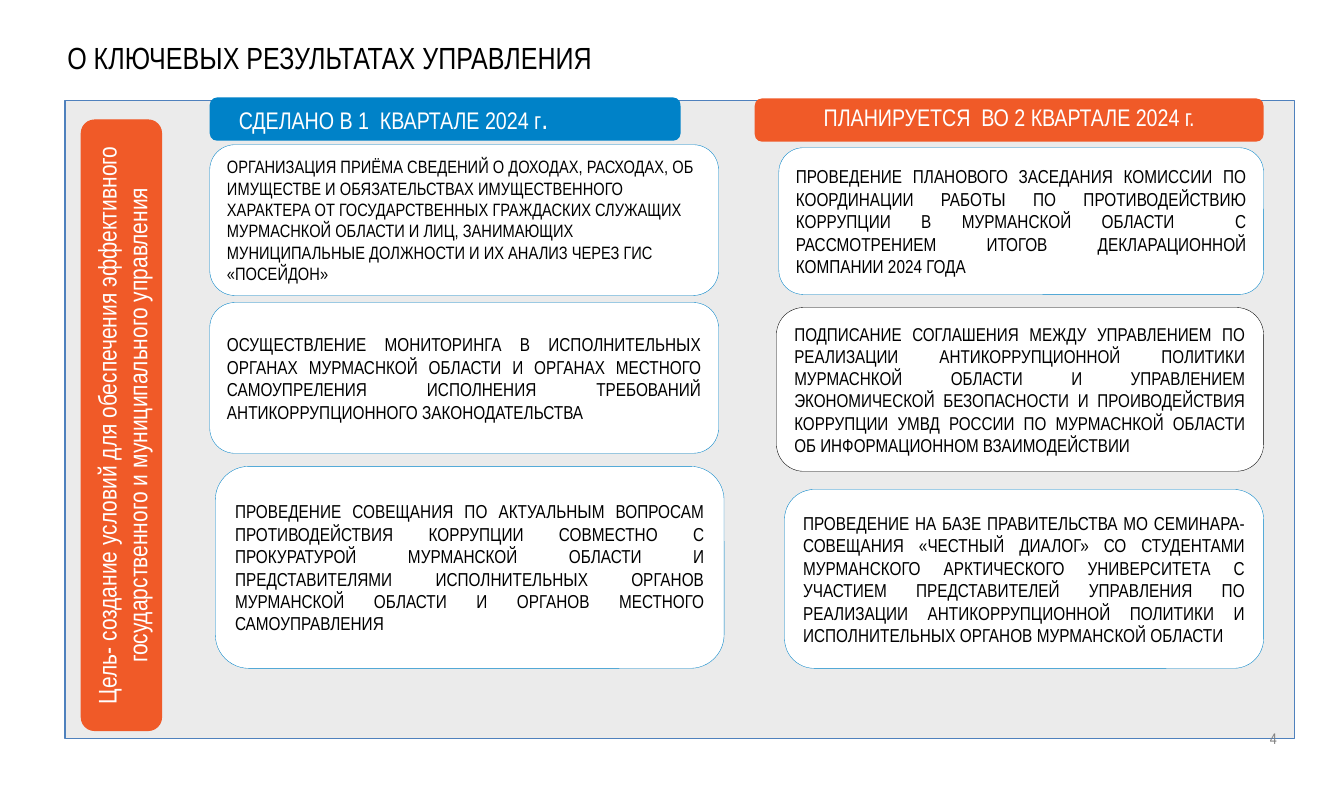
"""Build the slide on the key results of the department for two quarters."""
from dataclasses import dataclass

from pptx import Presentation
from pptx import util as u
from pptx.dml.color import RGBColor
from pptx.enum import shapes, text

WIDTH, HEIGHT = u.Cm(34), u.Cm(20)
FONT = "Arial Narrow"
COLOURS = {
    "black": "000000", "white": "FFFFFF", "grey": "808080", "panel": "EBEBEB",
    "edge": "4F81BD", "blue": "0082C8", "orange": "F05A28",
}
LEFT, JUSTIFY = text.PP_ALIGN.LEFT, text.PP_ALIGN.JUSTIFY
CENTER, RIGHT = text.PP_ALIGN.CENTER, text.PP_ALIGN.RIGHT
TOP, MIDDLE = text.MSO_ANCHOR.TOP, text.MSO_ANCHOR.MIDDLE


@dataclass(frozen=True)
class Area:
    """A rectangle in percent of the slide's width and height."""
    left: float
    top: float
    width: float
    height: float

    def lengths(self) -> dict[str, int]:
        return {
            "left": int(WIDTH * self.left / 100), "top": int(HEIGHT * self.top / 100),
            "width": int(WIDTH * self.width / 100), "height": int(HEIGHT * self.height / 100),
        }


@dataclass(frozen=True)
class Wording:
    """Text with its format; the insets are horizontal and vertical, in inches."""
    content: str
    size: float
    colour: str = "black"
    align: text.PP_ALIGN = JUSTIFY
    anchor: text.MSO_ANCHOR = MIDDLE
    insets: tuple[float, float] = (0.1, 0.05)
    ending: str = ""
    ending_size: float = 0


@dataclass(frozen=True)
class Panel:
    """A filled shape, with an outline where its line has a width."""
    area: Area
    fill: str
    line: str = "blue"
    line_width: float = 0
    wording: Wording | None = None
    rotation: float = 0
    kind: shapes.MSO_SHAPE = shapes.MSO_SHAPE.ROUNDED_RECTANGLE


@dataclass(frozen=True)
class Label:
    """Text standing on its own."""
    area: Area
    wording: Wording


def card(area: Area, content: str, size: float = 13.4, line: str = "blue",
         align: text.PP_ALIGN = JUSTIFY) -> Panel:
    """Describe a white card holding one result."""
    return Panel(area, "white", line, 0.25, Wording(content, size, align=align))


FRAME = Panel(Area(4.85, 12.71, 91.45, 80.69), "panel", "edge", 1,
              kind=shapes.MSO_SHAPE.RECTANGLE)
HEADERS = [
    Panel(Area(15.61, 12.33, 35.03, 5.46), "blue"),
    Panel(Area(56.16, 12.45, 37.86, 5.46), "orange"),
]
GOAL = Panel(Area(-13.67, 48.67, 45.41, 10.17), "orange", "orange", 0.75, Wording(
    "Цель- создание условий для обеспечения эффективного государственного "
    "и муниципального управления",
    18.3, "white", CENTER, TOP, (0.11, 0.06)), 270)
DONE = [
    card(Area(15.61, 18.3, 37.86, 19.06),
         "ОРГАНИЗАЦИЯ ПРИЁМА СВЕДЕНИЙ О ДОХОДАХ, РАСХОДАХ, ОБ ИМУЩЕСТВЕ И "
         "ОБЯЗАТЕЛЬСТВАХ ИМУЩЕСТВЕННОГО ХАРАКТЕРА ОТ ГОСУДАРСТВЕННЫХ ГРАЖДАСКИХ "
         "СЛУЖАЩИХ МУРМАСНКОЙ ОБЛАСТИ И ЛИЦ, ЗАНИМАЮЩИХ МУНИЦИПАЛЬНЫЕ ДОЛЖНОСТИ "
         "И ИХ АНАЛИЗ ЧЕРЕЗ ГИС «ПОСЕЙДОН»", 12.8, align=LEFT),
    card(Area(15.61, 38.25, 37.86, 19.06),
         "ОСУЩЕСТВЛЕНИЕ МОНИТОРИНГА В ИСПОЛНИТЕЛЬНЫХ ОРГАНАХ МУРМАСНКОЙ ОБЛАСТИ "
         "И ОРГАНАХ МЕСТНОГО САМОУПРЕЛЕНИЯ ИСПОЛНЕНИЯ ТРЕБОВАНИЙ "
         "АНТИКОРРУПЦИОННОГО ЗАКОНОДАТЕЛЬСТВА"),
    card(Area(16.02, 58.96, 37.86, 25.54),
         "ПРОВЕДЕНИЕ СОВЕЩАНИЯ ПО АКТУАЛЬНЫМ ВОПРОСАМ ПРОТИВОДЕЙСТВИЯ КОРРУПЦИИ "
         "СОВМЕСТНО С ПРОКУРАТУРОЙ МУРМАНСКОЙ ОБЛАСТИ И ПРЕДСТАВИТЕЛЯМИ "
         "ИСПОЛНИТЕЛЬНЫХ ОРГАНОВ МУРМАНСКОЙ ОБЛАСТИ И ОРГАНОВ МЕСТНОГО "
         "САМОУПРАВЛЕНИЯ"),
]
PLANNED = [
    card(Area(57.95, 18.68, 36.07, 18.55),
         "ПРОВЕДЕНИЕ ПЛАНОВОГО ЗАСЕДАНИЯ КОМИССИИ ПО КООРДИНАЦИИ РАБОТЫ ПО "
         "ПРОТИВОДЕЙСТВИЮ КОРРУПЦИИ В МУРМАНСКОЙ ОБЛАСТИ  С РАССМОТРЕНИЕМ ИТОГОВ "
         "ДЕКЛАРАЦИОННОЙ КОМПАНИИ 2024 ГОДА"),
    card(Area(57.77, 38.88, 36.25, 20.71),
         "ПОДПИСАНИЕ СОГЛАШЕНИЯ МЕЖДУ УПРАВЛЕНИЕМ ПО РЕАЛИЗАЦИИ "
         "АНТИКОРРУПЦИОННОЙ ПОЛИТИКИ МУРМАСНКОЙ ОБЛАСТИ И УПРАВЛЕНИЕМ "
         "ЭКОНОМИЧЕСКОЙ БЕЗОПАСНОСТИ И ПРОИВОДЕЙСТВИЯ КОРРУПЦИИ УМВД РОССИИ ПО "
         "МУРМАСНКОЙ ОБЛАСТИ ОБ ИНФОРМАЦИОННОМ ВЗАИМОДЕЙСТВИИ", 13.3, "black"),
    card(Area(58.37, 61.88, 35.65, 22.62),
         "ПРОВЕДЕНИЕ НА БАЗЕ ПРАВИТЕЛЬСТВА МО СЕМИНАРА-СОВЕЩАНИЯ «ЧЕСТНЫЙ ДИАЛОГ» "
         "СО СТУДЕНТАМИ МУРМАНСКОГО АРКТИЧЕСКОГО УНИВЕРСИТЕТА С УЧАСТИЕМ "
         "ПРЕДСТАВИТЕЛЕЙ УПРАВЛЕНИЯ ПО РЕАЛИЗАЦИИ АНТИКОРРУПЦИОННОЙ ПОЛИТИКИ И "
         "ИСПОЛНИТЕЛЬНЫХ ОРГАНОВ МУРМАНСКОЙ ОБЛАСТИ"),
]
TITLE = Label(Area(4.26, 4.32, 91.93, 5.97), Wording(
    "О КЛЮЧЕВЫХ РЕЗУЛЬТАТАХ УПРАВЛЕНИЯ", 21.9, align=LEFT, anchor=TOP))
LABELS = [
    Label(Area(17.03, 11.56, 32.11, 6.61), Wording(
        "СДЕЛАНО В 1  КВАРТАЛЕ 2024 г", 17.2, "white", LEFT,
        ending=".", ending_size=21.9)),
    Label(Area(55.56, 12.33, 39.06, 4.96), Wording(
        "ПЛАНИРУЕТСЯ  ВО 2 КВАРТАЛЕ 2024 г.", 17.2, "white", CENTER)),
    Label(Area(79.54, 90.95, 16.21, 4.83), Wording("4", 11, "grey", RIGHT)),
]


def colour(name: str) -> RGBColor:
    """Look up a named colour."""
    return RGBColor.from_string(COLOURS[name])


def apply(target: object, values: dict[str, object]) -> None:
    """Set each attribute in the dict on the target."""
    for name, value in values.items():
        setattr(target, name, value)


def write(box, wording: Wording) -> None:
    """Put formatted text into a box."""
    frame = box.text_frame
    across, down = map(u.Inches, wording.insets)
    apply(frame, {
        "word_wrap": True, "auto_size": text.MSO_AUTO_SIZE.NONE,
        "vertical_anchor": wording.anchor, "margin_left": across,
        "margin_right": across, "margin_top": down, "margin_bottom": down,
    })
    para = frame.paragraphs[0]
    para.alignment = wording.align
    pieces = [(wording.content, wording.size), (wording.ending, wording.ending_size)]
    for content, size in pieces:
        if content:
            span = para.add_run()
            span.text = content
            apply(span.font, {"name": FONT, "size": u.Pt(size)})
            span.font.color.rgb = colour(wording.colour)


def draw(page, panel: Panel) -> None:
    """Draw a panel and its text."""
    box = page.shapes.add_shape(panel.kind, **panel.area.lengths())
    box.shadow.inherit = False
    box.rotation = panel.rotation
    box.fill.solid()
    box.fill.fore_color.rgb = colour(panel.fill)
    if panel.line_width:
        box.line.color.rgb = colour(panel.line)
        box.line.width = u.Pt(panel.line_width)
    else:
        box.line.fill.background()
    if panel.wording:
        write(box, panel.wording)


def main() -> None:
    """Assemble and save the deck."""
    deck = Presentation()
    apply(deck, {"slide_width": WIDTH, "slide_height": HEIGHT})
    page = deck.slides.add_slide(deck.slide_layouts[5])
    apply(page.shapes.title, TITLE.area.lengths())
    write(page.shapes.title, TITLE.wording)
    for panel in [FRAME, *HEADERS, GOAL, *DONE, *PLANNED]:
        draw(page, panel)
    for label in LABELS:
        write(page.shapes.add_textbox(**label.area.lengths()), label.wording)
    deck.save("out.pptx")


if __name__ == "__main__":
    main()
